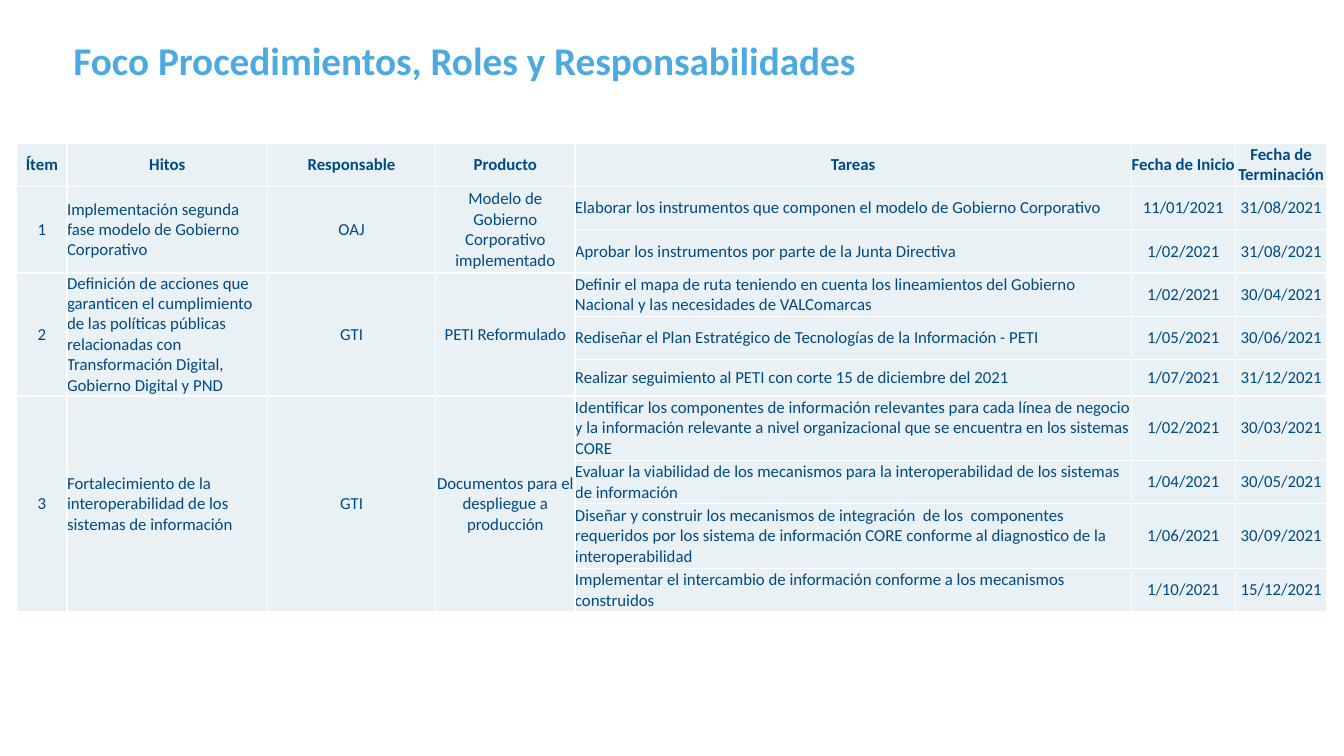
import pptx
import pptx.util
import pptx.dml.color
import pptx.enum.text
import pptx.oxml
import pptx.oxml.ns

Cm = pptx.util.Cm
ALIGN = pptx.enum.text.PP_ALIGN
ANCHOR = pptx.enum.text.MSO_ANCHOR

HEADERS = ["Ítem", "Hitos", "Responsable", "Producto", "Tareas", "Fecha de Inicio", "Fecha de Terminación"]
TASK_COLUMN = HEADERS.index("Tareas")
LEFT_COLUMNS = (HEADERS.index("Hitos"), TASK_COLUMN)
COLUMN_WIDTHS = [1.27, 5.05, 4.24, 3.51, 14.02, 2.62, 2.31]
HEADER_HEIGHT = 1.09

MILESTONES = [
    ("Implementación segunda fase modelo de Gobierno Corporativo", "OAJ",
     "Modelo de Gobierno Corporativo implementado", [
         ("Elaborar los instrumentos que componen el modelo de Gobierno Corporativo",
          "11/01/2021", "31/08/2021", 1.09),
         ("Aprobar los instrumentos por parte de la Junta Directiva",
          "1/02/2021", "31/08/2021", 1.09),
     ]),
    ("Definición de acciones que garanticen el cumplimiento de las políticas públicas "
     "relacionadas con Transformación Digital, Gobierno Digital y PND", "GTI",
     "PETI Reformulado", [
         ("Definir el mapa de ruta teniendo en cuenta los lineamientos del Gobierno "
          "Nacional y las necesidades de VALComarcas",
          "1/02/2021", "30/04/2021", 1.09),
         ("Rediseñar el Plan Estratégico de Tecnologías de la Información - PETI",
          "1/05/2021", "30/06/2021", 1.09),
         ("Realizar seguimiento al PETI con corte 15 de diciembre del 2021",
          "1/07/2021", "31/12/2021", 0.89),
     ]),
    ("Fortalecimiento de la interoperabilidad de los sistemas de información", "GTI",
     "Documentos para el despliegue a producción", [
         ("Identificar los componentes de información relevantes para cada línea de negocio "
          "y la información relevante a nivel organizacional que se encuentra en los sistemas CORE",
          "1/02/2021", "30/03/2021", 1.63),
         ("Evaluar la viabilidad de los mecanismos para la interoperabilidad de los sistemas "
          "de información",
          "1/04/2021", "30/05/2021", 1.09),
         ("Diseñar y construir los mecanismos de integración  de los  componentes "
          "requeridos por los sistema de información CORE conforme al diagnostico de la "
          "interoperabilidad",
          "1/06/2021", "30/09/2021", 1.63),
         ("Implementar el intercambio de información conforme a los mecanismos construidos",
          "1/10/2021", "15/12/2021", 1.09),
     ]),
]


def color(value):
    return pptx.dml.color.RGBColor.from_string(value)


def write(frame, text, size=12, fill="004A84", bold=False, align=ALIGN.LEFT):
    para = frame.paragraphs[0]
    para.alignment = align
    span = para.add_run()
    span.text = text
    span.font.name = "Calibri"
    span.font.size = pptx.util.Pt(size)
    span.font.bold = bold
    span.font.color.rgb = color(fill)


def style_cell(cell):
    cell.margin_left = cell.margin_right = cell.margin_top = cell.margin_bottom = 0
    cell.vertical_anchor = ANCHOR.MIDDLE
    properties = cell._tc.get_or_add_tcPr()
    for side in "LRTB":
        properties.append(pptx.oxml.parse_xml(
            f'<a:ln{side} {pptx.oxml.ns.nsdecls("a")} w="12700">'
            f'<a:solidFill><a:srgbClr val="FFFFFF"/></a:solidFill></a:ln{side}>'))
    cell.fill.solid()
    cell.fill.fore_color.rgb = color("E9F1F5")


def add_title(page, left, top, width, height):
    box = page.shapes.title
    box.left, box.top, box.width, box.height = Cm(left), Cm(top), Cm(width), Cm(height)
    frame = box.text_frame
    frame.word_wrap = True
    frame.auto_size = pptx.enum.text.MSO_AUTO_SIZE.NONE
    frame.vertical_anchor = ANCHOR.TOP
    frame.margin_left = frame.margin_right = Cm(0.25)
    frame.margin_top = frame.margin_bottom = Cm(0.13)
    write(frame, "Foco Procedimientos, Roles y Responsabilidades", size=28, fill="4BAAE1", bold=True)


def add_schedule(page, left, top, width):
    tasks = [task for milestone in MILESTONES for task in milestone[-1]]
    heights = [HEADER_HEIGHT] + [task[-1] for task in tasks]
    table = page.shapes.add_table(len(heights), len(HEADERS), Cm(left), Cm(top),
                                  Cm(width), Cm(sum(heights))).table
    scale = width / sum(COLUMN_WIDTHS)
    for column, column_width in zip(table.columns, COLUMN_WIDTHS):
        column.width = Cm(column_width * scale)
    for row, height in zip(table.rows, heights):
        row.height = Cm(height)
    for cell in table.iter_cells():
        style_cell(cell)

    def fill_cells(row, first_column, texts):
        for column, text in enumerate(texts, first_column):
            centered = row == 0 or column not in LEFT_COLUMNS
            write(table.cell(row, column).text_frame, text, bold=row == 0,
                  align=ALIGN.CENTER if centered else ALIGN.LEFT)

    fill_cells(0, 0, HEADERS)
    row = 1
    for number, (goal, owner, product, steps) in enumerate(MILESTONES, 1):
        last_row = row + len(steps) - 1
        for column in range(TASK_COLUMN):
            table.cell(row, column).merge(table.cell(last_row, column))
        fill_cells(row, 0, [str(number), goal, owner, product])
        for offset, step in enumerate(steps):
            fill_cells(row + offset, TASK_COLUMN, step[:-1])
        row = last_row + 1


def main():
    deck = pptx.Presentation()
    deck.slide_width, deck.slide_height = Cm(33.87), Cm(19.05)
    page = deck.slides.add_slide(deck.slide_layouts.get_by_name("Title Only"))
    add_title(page, 1.6, 0.79, 25.35, 1.45)
    add_schedule(page, 0.42, 3.61, 33.02)
    deck.save("out.pptx")


if __name__ == "__main__":
    main()
